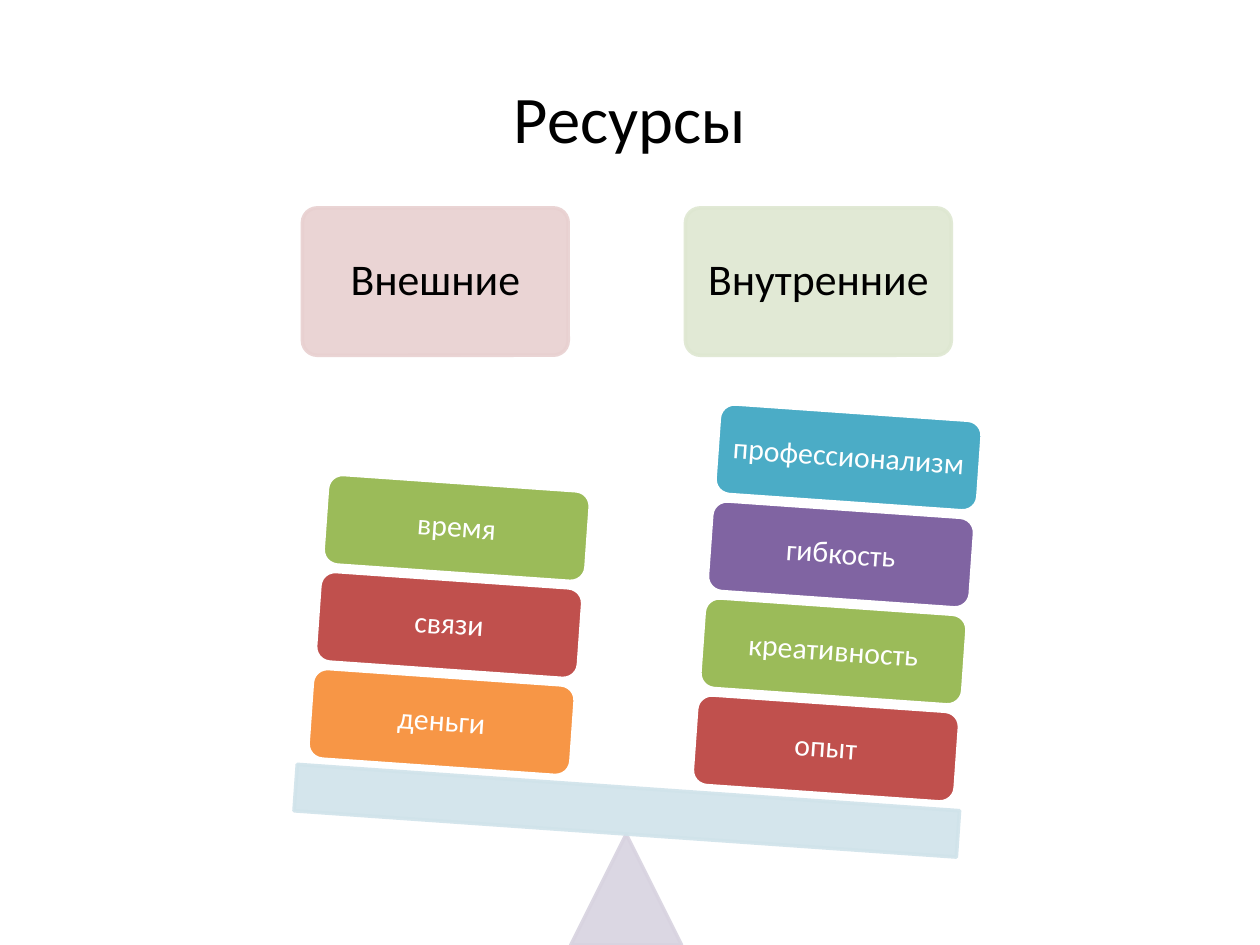
from lxml import etree
from pptx import Presentation
from pptx.dml.color import RGBColor
from pptx.enum import shapes, text
from pptx.oxml.ns import qn
from pptx.util import Inches, Pt

BLACK = RGBColor(0x00, 0x00, 0x00)
WHITE = RGBColor(0xFF, 0xFF, 0xFF)
PINK = RGBColor(0xE8, 0xD0, 0xD0)
PALE = RGBColor(0xDE, 0xE7, 0xD1)
LILAC = RGBColor(0xD8, 0xD3, 0xE0)
SKY = RGBColor(0xD0, 0xE3, 0xEA)
RED = RGBColor(0xC0, 0x50, 0x4D)
GREEN = RGBColor(0x9B, 0xBB, 0x59)
PURPLE = RGBColor(0x80, 0x64, 0xA2)
TEAL = RGBColor(0x4B, 0xAC, 0xC6)
ORANGE = RGBColor(0xF7, 0x96, 0x46)
KIND = shapes.MSO_SHAPE
TILT = 4


def add_part(kind, box, fill, edge=None):
    """Add a shape; without its own edge colour it is 90 % opaque."""
    part = slide.shapes.add_shape(kind, *[Inches(n) for n in box])
    part.shadow.inherit = False
    part.fill.solid()
    part.fill.fore_color.rgb = fill
    part.line.color.rgb = edge or fill
    part.line.width = Pt(2)
    if edge is None:
        for clr in part._element.spPr.iter(qn("a:srgbClr")):
            etree.SubElement(clr, qn("a:alpha"), val="90000")
    return part


def write(part, words, size, color, inset):
    frame = part.text_frame
    frame.text = words
    frame.word_wrap = True
    frame.vertical_anchor = text.MSO_ANCHOR.MIDDLE
    frame.margin_left = frame.margin_right = Inches(inset)
    frame.margin_top = frame.margin_bottom = Inches(inset)
    para = frame.paragraphs[0]
    para.alignment = text.PP_ALIGN.CENTER
    para.line_spacing = 0.9
    font = para.runs[0].font
    font.name, font.size, font.color.rgb = "Calibri", Pt(size), color


prs = Presentation()
prs.slide_width, prs.slide_height = Inches(10), Inches(7.5)
slide = prs.slides.add_slide(prs.slide_layouts[5])

# Title
title = slide.shapes.title
title.left, title.top = Inches(0.5), Inches(0.3)
title.width, title.height = Inches(9), Inches(1.25)
write(title, "Ресурсы", 38, BLACK, 0.1)
title.text_frame.paragraphs[0].line_spacing = 1.0

# Headings of the two pans
for left, words, fill in [(2.4, "Внешние", PINK), (5.44, "Внутренние", PALE)]:
    head = add_part(KIND.ROUNDED_RECTANGLE, (left, 1.65, 2.11, 1.17), fill)
    head.adjustments[0] = 0.1
    write(head, words, 25, BLACK, 0.1)

# Pivot and tilted beam
add_part(KIND.ISOSCELES_TRIANGLE, (4.53, 6.62, 0.88, 0.88), LILAC)
beam = add_part(KIND.RECTANGLE, (2.34, 6.25, 5.27, 0.37), SKY)
beam.rotation = TILT

# Weights, stacked from the beam upwards
stacks = [
    (5.51, 5.58, [("опыт", RED), ("креативность", GREEN),
                  ("гибкость", PURPLE), ("профессионализм", TEAL)]),
    (2.46, 5.37, [("деньги", ORANGE), ("связи", RED), ("время", GREEN)]),
]
for left, top, items in stacks:
    for i, (words, fill) in enumerate(items):
        box = (left + 0.06 * i, top - 0.77 * i, 2.09, 0.72)
        block = add_part(KIND.ROUNDED_RECTANGLE, box, fill, WHITE)
        block.rotation = TILT
        write(block, words, 17, WHITE, 0.07)

prs.save("out.pptx")
